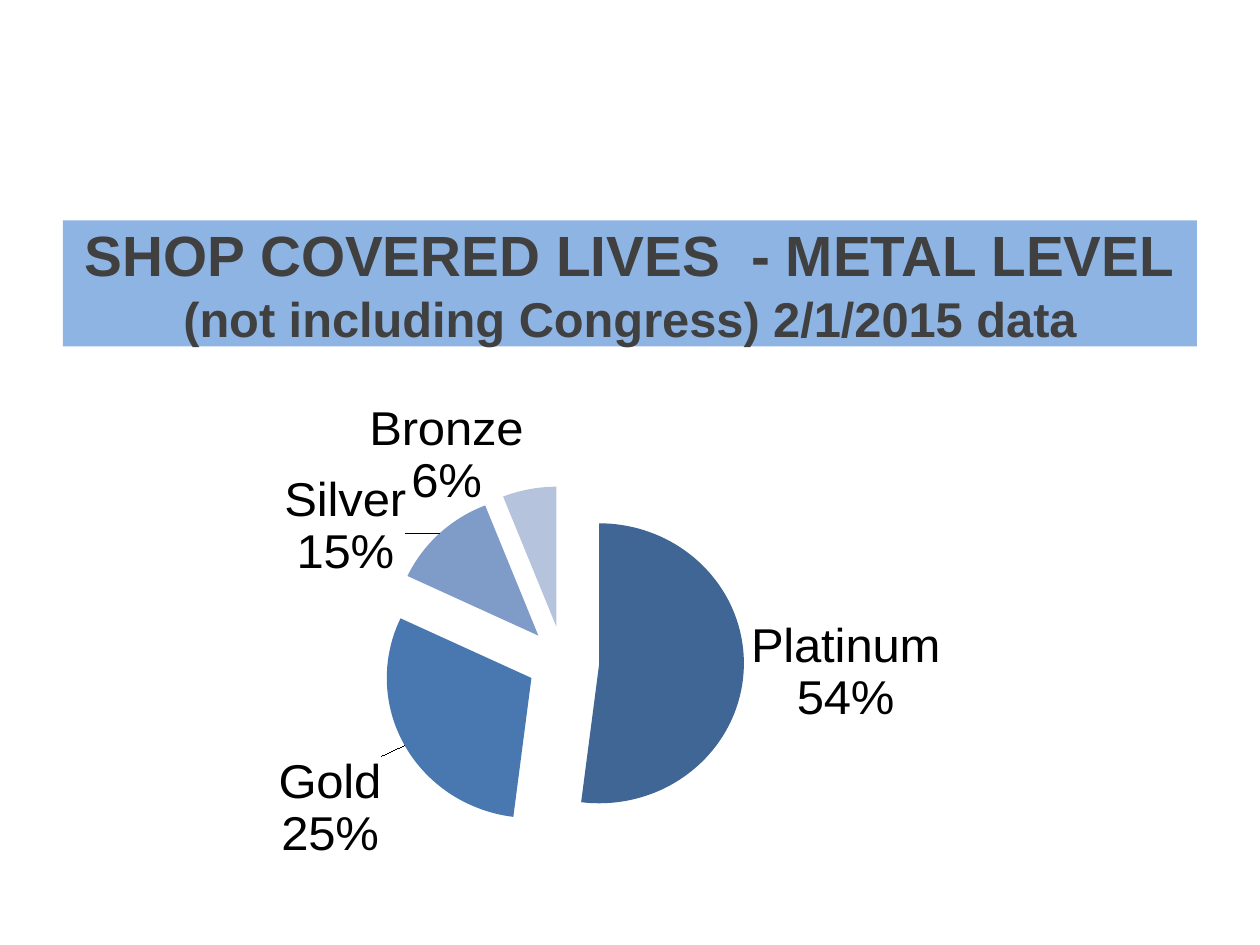
from lxml import etree
from pptx import Presentation
from pptx import util as u
from pptx.chart.data import CategoryChartData
from pptx.dml.color import RGBColor
from pptx.enum import chart as charts, shapes, text
from pptx.oxml.ns import qn

COLORS = {
    "banner": "8EB4E3", "title": "404040", "label": "000000",
    "Platinum": "406696", "Gold": "4978B1", "Silver": "7F9BC8", "Bronze": "B5C3DC",
}
# level, value, label percentage, label offset as a fraction of the chart
LEVELS = [
    ("Platinum", 52, "54%", None),
    ("Gold", 30, "25%", (-0.015, 0.015)),
    ("Silver", 12, "15%", (-0.025, 0.1)),
    ("Bronze", 6, "6%", (-0.004, 0.05)),
]


def style_font(font, size, color, bold=False):
    for name, value in {"name": "Arial", "size": u.Pt(size), "bold": bold}.items():
        setattr(font, name, value)
    font.color.rgb = RGBColor.from_string(COLORS[color])


def make_layout(**values):
    """Return a manual c:layout element holding the given settings."""
    layout = etree.Element(qn("c:layout"))
    manual = etree.SubElement(layout, qn("c:manualLayout"))
    for name, value in values.items():
        etree.SubElement(manual, qn(f"c:{name}")).set("val", str(value))
    return layout


presentation = Presentation()
presentation.slide_width, presentation.slide_height = u.Inches(10), u.Inches(7.5)
slide = presentation.slides.add_slide(presentation.slide_layouts[6])

# Title banner
banner = slide.shapes.add_shape(
    shapes.MSO_SHAPE.RECTANGLE, u.Inches(0.5), u.Inches(1.75), u.Inches(9), u.Inches(1))
banner.shadow.inherit = False
banner.fill.solid()
banner.fill.fore_color.rgb = RGBColor.from_string(COLORS["banner"])
banner.line.fill.background()
banner.text_frame.word_wrap = True
banner.text_frame.vertical_anchor = text.MSO_ANCHOR.MIDDLE
paragraph = banner.text_frame.paragraphs[0]
paragraph.alignment = text.PP_ALIGN.CENTER
run = paragraph.add_run()
run.text = "SHOP COVERED LIVES  - METAL LEVEL"
style_font(run.font, 32.4, "title", bold=True)
paragraph.add_line_break()
etree.SubElement(paragraph._p.find(qn("a:br")), qn("a:rPr")).set("sz", "3600")
run = paragraph.add_run()
run.text = "(not including Congress) 2/1/2015 data"
style_font(run.font, 27.9, "title", bold=True)

# Exploded pie
data = CategoryChartData(number_format="#,##0")
data.categories = [level[0] for level in LEVELS]
data.add_series("Series 1", [level[1] for level in LEVELS])
chart = slide.shapes.add_chart(
    charts.XL_CHART_TYPE.PIE, u.Inches(0.42), u.Inches(3), u.Inches(9), u.Inches(4.12),
    data).chart
chart.has_title = False
chart.has_legend = False
style_font(chart.font, 18, "label")
plot = chart.plots[0]
plot.vary_by_categories = True

plot_area = chart._chartSpace.chart.plotArea
for old_layout in plot_area.findall(qn("c:layout")):
    plot_area.remove(old_layout)
plot_area.insert(0, make_layout(
    layoutTarget="inner", xMode="edge", yMode="edge", x=0.062, y=0.182, w=0.776, h=0.697))

series = plot.series[0]
explosion = etree.Element(qn("c:explosion"))
explosion.set("val", "25")
series._element.find(qn("c:tx")).addnext(explosion)

labels = series.data_labels
labels.show_value = False
labels.show_category_name = True
labels.show_percentage = True
labels.position = charts.XL_LABEL_POSITION.OUTSIDE_END
style_font(labels.font, 28, "label")

for index, (name, value, percent, offset) in enumerate(LEVELS):
    point = series.points[index]
    point.format.fill.solid()
    point.format.fill.fore_color.rgb = RGBColor.from_string(COLORS[name])
    point.format.line.fill.background()
    label = point.data_label
    label.text_frame.text = f"{name}\n{percent}"
    for paragraph in label.text_frame.paragraphs:
        style_font(paragraph.runs[0].font, 28, "label")
    label.position = charts.XL_LABEL_POSITION.OUTSIDE_END
    if offset:
        element = labels._element.findall(qn("c:dLbl"))[index]
        element.find(qn("c:idx")).addnext(make_layout(x=offset[0], y=offset[1]))

presentation.save("out.pptx")
